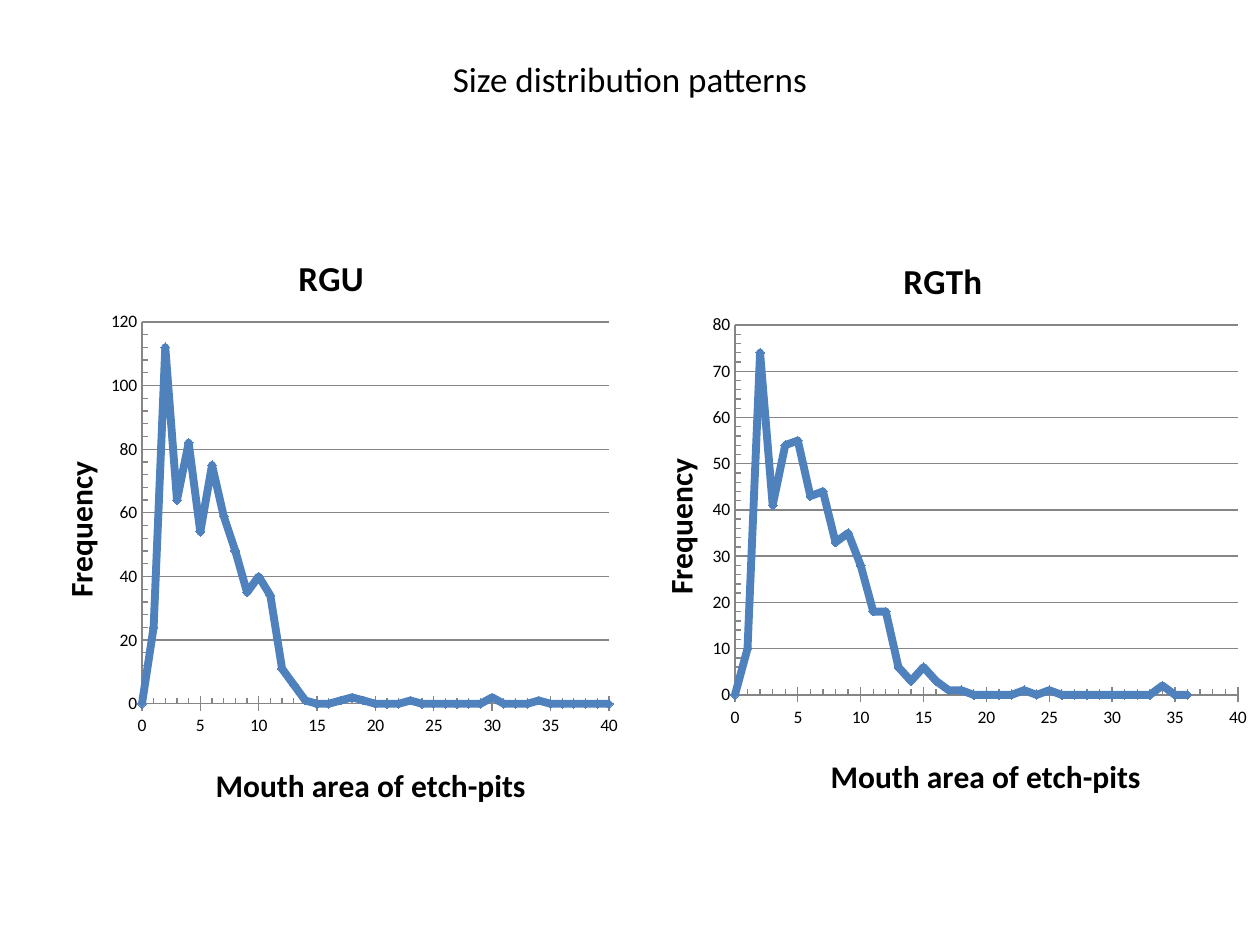
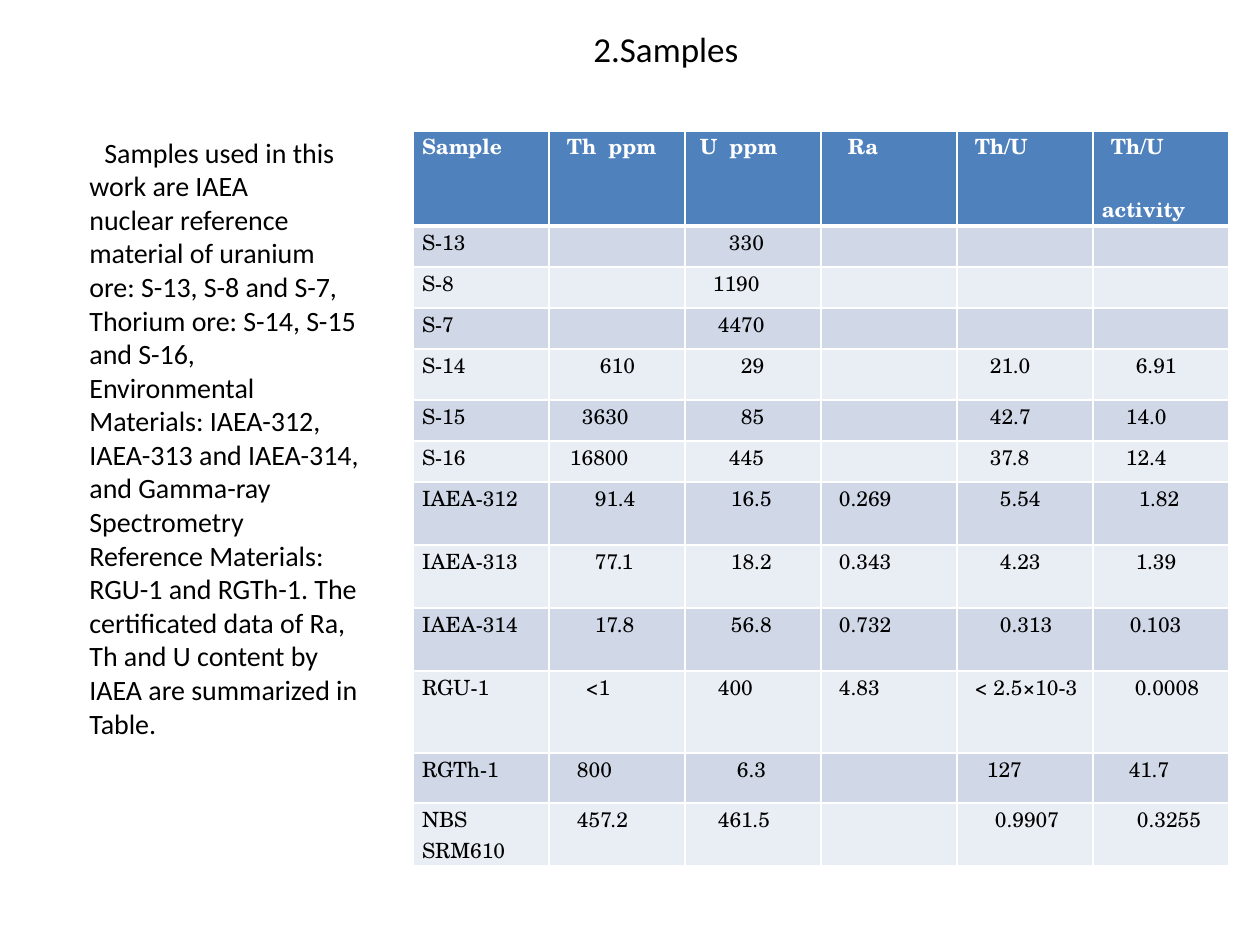
from lxml import etree
from pptx import Presentation
from pptx import util as u
from pptx.chart.data import XyChartData
from pptx.dml.color import RGBColor
from pptx.enum import chart as ch
from pptx.enum import text
from pptx.oxml import parse_xml
from pptx.oxml.ns import nsdecls, qn

# Shared look
HEX = {"ink": "000000", "white": "FFFFFF", "blue": "4F81BD", "grid": "868686",
       "odd": "D0D8E8", "even": "E9EDF4"}
SANS, SERIF = "Calibri", "TeX Gyre Schola"
SCALE = 914400 / 126

# Slide 1: frames and parts are in px on the slide
HEAD1 = ("Size distribution patterns", (63, 38, 1134, 81))
XNAME, YNAME = "Mouth area of etch-pits", "Frequency"
PLOTS = [
    {"name": "RGU", "box": (20, 217, 610, 610), "plot": (142, 322, 467, 382),
     "heads": [(292, 247), (210, 758), (53, 456)], "top": 120, "step": 20,
     "vals": [0, 24, 112, 64, 82, 54, 75, 59, 48, 35, 40, 34, 11, 6, 1, 0, 0, 1, 2, 1,
              0, 0, 0, 1, 0, 0, 0, 0, 0, 0, 2, 0, 0, 0, 1, 0, 0, 0, 0, 0, 0]},
    {"name": "RGTh", "box": (620, 220, 640, 596), "plot": (735, 325, 503, 370),
     "heads": [(897, 250), (825, 749), (653, 453)], "top": 80, "step": 10,
     "vals": [0, 10, 74, 41, 54, 55, 43, 44, 33, 35, 28, 18, 18, 6, 3, 6, 3, 1, 1, 0,
              0, 0, 0, 1, 0, 1, 0, 0, 0, 0, 0, 0, 0, 0, 2, 0, 0]},
]

# Slide 2: each filled cell is (words, first-line indent in px)
HEAD2 = ("2.Samples", (129, 38, 1074, 21))
BODY = ("Samples used in this work are IAEA　nuclear reference material of uranium ore: "
        "S-13, S-8 and S-7, Thorium ore: S-14, S-15 and S-16, Environmental Materials: "
        "IAEA-312, IAEA-313 and IAEA-314, and Gamma-ray Spectrometry Reference Materials: "
        "RGU-1 and RGTh-1. The certificated data of Ra, Th and U content by IAEA are "
        "summarized in Table.")
BODY_BOX = (29, 129, 344, 716)
GRID_AT, COL = (413, 131), 136
NIL = ("", 0)
ROWS = [  # height, sample, Th, U, Ra, Th/U, activity ratio
    (95, ("Sample", 0), ("Th  ppm", 9), ("U  ppm", 6), ("Ra", 18), ("Th/U", 9),
     ("Th/U\nactivity", 9)),
    (41, ("S-13", 0), NIL, ("330", 35), NIL, NIL, NIL),
    (41, ("S-8", 0), NIL, ("1190", 19), NIL, NIL, NIL),
    (41, ("S-7", 0), NIL, ("4470", 24), NIL, NIL, NIL),
    (51, ("S-14", 0), ("610", 42), ("29", 47), NIL, ("21.0", 24), ("6.91", 34)),
    (41, ("S-15", 0), ("3630", 24), ("85", 47), NIL, ("42.7", 24), ("14.0", 24)),
    (41, ("S-16", 0), ("16800", 12), ("445", 35), NIL, ("37.8", 24), ("12.4", 24)),
    (63, ("IAEA-312", 0), ("91.4", 37), ("16.5", 37), ("0.269", 9), ("5.54", 34), ("1.82", 37)),
    (63, ("IAEA-313", 0), ("77.1", 37), ("18.2", 37), ("0.343", 9), ("4.23", 34), ("1.39", 34)),
    (63, ("IAEA-314", 0), ("17.8", 37), ("56.8", 37), ("0.732", 9), ("0.313", 34), ("0.103", 28)),
    (82, ("RGU-1", 0), ("<1", 28), ("400", 24), ("4.83", 9), ("< 2.5×10-3", 9), ("0.0008", 33)),
    (50, ("RGTh-1", 0), ("800", 19), ("6.3", 43), NIL, ("127", 21), ("41.7", 27)),
    (62, ("NBS SRM610", 0), ("457.2", 19), ("461.5", 24), NIL, ("0.9907", 29), ("0.3255", 35)),
]


def px(val):
    return u.Emu(round(val * SCALE))


def place(box):
    return [px(v) for v in box]


def put(obj, **vals):
    for key, val in vals.items():
        setattr(obj, key, val)


def style(font, size, hue="ink", face=SANS, bold=False):
    put(font, size=u.Pt(size), name=face, bold=bold)
    font.color.rgb = RGBColor.from_string(HEX[hue])


def indent(par, left, first):
    props = par._p.get_or_add_pPr()
    props.set("marL", str(px(left)))
    props.set("indent", str(px(first)))


def start(deck, words, box):
    slide = deck.slides.add_slide(deck.slide_layouts[5])
    head = slide.shapes.title
    put(head, **dict(zip(("left", "top", "width", "height"), place(box))))
    frame = head.text_frame
    put(frame, text=words, vertical_anchor=text.MSO_ANCHOR.MIDDLE)
    par = frame.paragraphs[0]
    par.alignment = text.PP_ALIGN.CENTER
    style(par.runs[0].font, 20)
    return slide


def pin(node, spot, part, frame):
    """Fix a chart part at a px place inside the chart frame."""
    for old in node.findall(qn("c:layout")):
        node.remove(old)
    x, y, w, h = frame
    vals = {"x": (part[0] - x) / w, "y": (part[1] - y) / h}
    if len(part) == 4:
        vals.update(w=part[2] / w, h=part[3] / h)
    lay = etree.SubElement(node, qn("c:layout"))
    man = etree.SubElement(lay, qn("c:manualLayout"))
    if len(part) == 4:
        etree.SubElement(man, qn("c:layoutTarget"), val="inner")
    for key in "xy":
        etree.SubElement(man, qn(f"c:{key}Mode"), val="edge")
    for key, val in vals.items():
        etree.SubElement(man, qn(f"c:{key}"), val=f"{val:.4f}")
    node.insert(spot, lay)


def label(title, words, size):
    title.text_frame.text = words
    style(title.text_frame.paragraphs[0].runs[0].font, size, bold=True)


def line(fmt, hue, width):
    fmt.color.rgb = RGBColor.from_string(HEX[hue])
    fmt.width = u.Pt(width)


def draw(slide, item):
    data = XyChartData()
    dots = data.add_series("Series 1")
    for x, y in enumerate(item["vals"]):
        dots.add_data_point(x, y)
    chart = slide.shapes.add_chart(ch.XL_CHART_TYPE.XY_SCATTER_LINES,
                                   *place(item["box"]), data).chart
    style(chart.font, 10)
    put(chart, has_legend=False, has_title=True)
    label(chart.chart_title, item["name"], 20)
    chart.plots[0].vary_by_categories = False

    # Axes
    tick = ch.XL_TICK_MARK
    axes = [(chart.category_axis, XNAME, 40, 5, tick.CROSS, False),
            (chart.value_axis, YNAME, item["top"], item["step"], tick.NONE, True)]
    for axis, words, top, step, mark, grid in axes:
        put(axis, minimum_scale=0, maximum_scale=top, major_unit=step, has_title=True,
            major_tick_mark=mark, minor_tick_mark=tick.INSIDE, has_major_gridlines=grid)
        label(axis.axis_title, words, 18)
        line(axis.format.line, "grid", 0.75)
        put(axis.tick_labels, number_format="General", number_format_is_linked=False)
        if grid:
            line(axis.major_gridlines.format.line, "grid", 0.75)
    turn = chart.value_axis.axis_title.text_frame._txBody.bodyPr
    turn.set("rot", "-5400000")
    turn.set("vert", "horz")

    # Curve
    curve = chart.plots[0].series[0]
    curve.smooth = False
    line(curve.format.line, "blue", 4.5)
    put(curve.marker, style=ch.XL_MARKER_STYLE.DIAMOND, size=5)
    curve.marker.format.fill.solid()
    curve.marker.format.fill.fore_color.rgb = RGBColor.from_string(HEX["blue"])
    line(curve.marker.format.line, "blue", 0.75)

    # Places of the plot and the three titles
    root = chart.element
    pin(next(root.iter(qn("c:plotArea"))), 0, item["plot"], item["box"])
    for node, part in zip(list(root.iter(qn("c:title"))), item["heads"]):
        pin(node, 1, part, item["box"])


def edge(cell, row):
    wide = {"L": 1, "R": 1, "T": 3 if row == 1 else 1, "B": 3 if row == 0 else 1}
    props = cell._tc.get_or_add_tcPr()
    for side in "LRTB":
        props.append(parse_xml(
            f'<a:ln{side} {nsdecls("a")} w="{u.Pt(wide[side])}"><a:solidFill>'
            f'<a:srgbClr val="{HEX["white"]}"/></a:solidFill></a:ln{side}>'))


def fill(cell, row, words, first):
    edge(cell, row)
    put(cell, margin_left=px(9), margin_right=px(9), margin_top=0, margin_bottom=0)
    cell.fill.solid()
    tone = "blue" if row == 0 else "odd" if row % 2 else "even"
    cell.fill.fore_color.rgb = RGBColor.from_string(HEX[tone])
    cell.text_frame.text = words
    for n, par in enumerate(cell.text_frame.paragraphs):
        put(par, alignment=text.PP_ALIGN.JUSTIFY, line_spacing=u.Pt(18),
            space_before=u.Pt(18 * n))
        indent(par, 0, 0 if n else first)
        for run in par.runs:
            style(run.font, 12, "ink" if row else "white", SERIF, row == 0)


def main():
    deck = Presentation()
    put(deck, slide_width=u.Inches(10), slide_height=u.Inches(7.5))

    # Size distributions
    slide = start(deck, *HEAD1)
    for item in PLOTS:
        draw(slide, item)

    # Samples: body text
    slide = start(deck, *HEAD2)
    frame = slide.shapes.add_textbox(*place(BODY_BOX)).text_frame
    put(frame, word_wrap=True, text=BODY)
    par = frame.paragraphs[0]
    par.space_before = u.Pt(3)
    indent(par, 48, 15)
    style(par.runs[0].font, 16)

    # Samples: table
    cols = len(ROWS[0]) - 1
    size = (cols * COL, sum(row[0] for row in ROWS))
    table = slide.shapes.add_table(len(ROWS), cols, *place(GRID_AT + size)).table
    for col in table.columns:
        col.width = px(COL)
    for r, (high, *cells) in enumerate(ROWS):
        table.rows[r].height = px(high)
        for c, (words, first) in enumerate(cells):
            fill(table.cell(r, c), r, words, first)

    deck.save("out.pptx")


if __name__ == "__main__":
    main()
